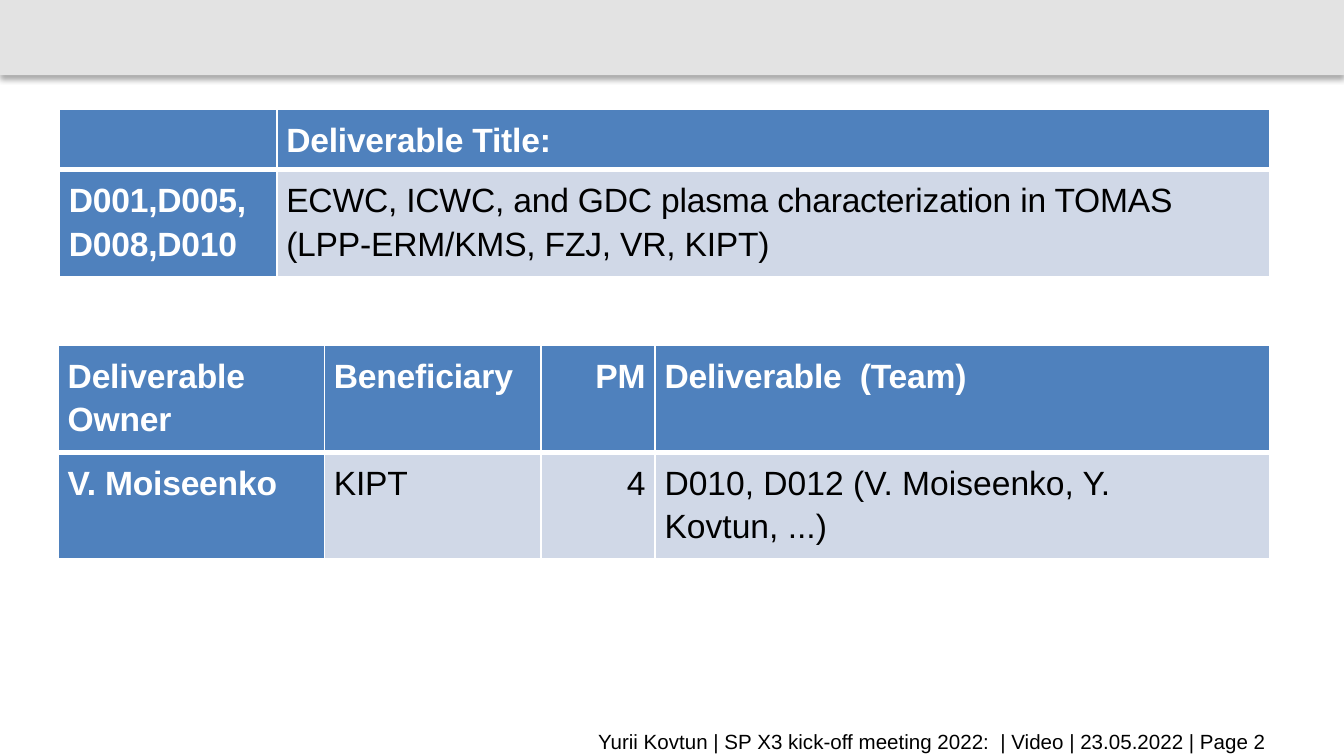
import pptx
import pptx.dml.color
import pptx.enum.shapes
import pptx.enum.text
import pptx.oxml
import pptx.oxml.ns
import pptx.util
from pptx.util import Cm

COLORS = {"band": "E3E3E3", "header": "4F81BD", "body": "D0D8E7",
          "white": "FFFFFF", "black": "000000"}
FONT = "Arial"
LEFT = pptx.enum.text.PP_ALIGN.LEFT
RIGHT = pptx.enum.text.PP_ALIGN.RIGHT


def rgb(name):
    return pptx.dml.color.RGBColor.from_string(COLORS[name])


def xml(markup):
    return pptx.oxml.parse_xml(markup.replace(">", f" {pptx.oxml.ns.nsdecls('a')}>", 1))


class SlideBuilder:
    def __init__(self, page):
        self.page = page

    def add_span(self, para, text, size, color, bold=False, spacing=0):
        span = para.add_run()
        span.text = text
        span.font.name = FONT
        span.font.size = pptx.util.Pt(size)
        span.font.bold = bold
        span.font.color.rgb = rgb(color)
        if spacing:
            span._r.get_or_add_rPr().set("spc", str(spacing))

    def add_band(self, width, height):
        band = self.page.shapes.add_shape(
            pptx.enum.shapes.MSO_SHAPE.RECTANGLE, 0, 0, width, height)
        band.fill.solid()
        band.fill.fore_color.rgb = rgb("band")
        band.line.fill.background()
        band.shadow.inherit = False
        effects = band._element.spPr.find(pptx.oxml.ns.qn("a:effectLst"))
        effects.append(xml(
            '<a:outerShdw blurRad="39370" dist="22860" dir="5400000" rotWithShape="0">'
            f'<a:srgbClr val="{COLORS["black"]}"><a:alpha val="35000"/></a:srgbClr>'
            '</a:outerShdw>'))

    def add_footer(self, text, left, top, width, height):
        box = self.page.shapes.add_textbox(left, top, width, height)
        box.text_frame.word_wrap = True
        para = box.text_frame.paragraphs[0]
        para.alignment = RIGHT
        self.add_span(para, text, 11, "black")

    def add_borders(self, cell, is_header):
        thin, thick = 12192, 38100
        widths = {"lnL": thin, "lnR": thin,
                  "lnT": thin if is_header else thick,
                  "lnB": thick if is_header else thin}
        properties = cell._tc.get_or_add_tcPr()
        for side, width in widths.items():
            properties.append(xml(
                f'<a:{side} w="{width}"><a:solidFill>'
                f'<a:srgbClr val="{COLORS["white"]}"/></a:solidFill></a:{side}>'))

    def add_table(self, rows, left, top, widths, heights,
                  right_columns=(), unspaced_cells=()):
        table = self.page.shapes.add_table(
            len(rows), len(widths), left, top, sum(widths), sum(heights)).table
        for column, width in zip(table.columns, widths):
            column.width = width
        for row, height in zip(table.rows, heights):
            row.height = height
        for i, texts in enumerate(rows):
            for j, text in enumerate(texts):
                cell = table.cell(i, j)
                # The top row and the first column share the header style
                strong = i == 0 or j == 0
                self.add_borders(cell, is_header=i == 0)
                cell.fill.solid()
                cell.fill.fore_color.rgb = rgb("header" if strong else "body")
                cell.margin_left = cell.margin_right = Cm(0.18)
                cell.margin_top = cell.margin_bottom = Cm(0.13)
                para = cell.text_frame.paragraphs[0]
                para.line_spacing = 1.15
                para.alignment = RIGHT if j in right_columns else LEFT
                if text:
                    self.add_span(para, text, 18, "white" if strong else "black",
                                  bold=strong,
                                  spacing=0 if (i, j) in unspaced_cells else -10)


def main():
    deck = pptx.Presentation()
    deck.slide_width, deck.slide_height = Cm(25.4), Cm(14.28)
    builder = SlideBuilder(deck.slides.add_slide(deck.slide_layouts[6]))

    # Header band and footer
    builder.add_band(deck.slide_width, Cm(1.42))
    builder.add_footer(
        "Yurii Kovtun | SP X3 kick-off meeting 2022:  | Video | 23.05.2022 | Page 2",
        Cm(1.3), Cm(13.64), Cm(22.89), Cm(0.56))

    # Deliverable titles
    builder.add_table(
        [["", "Deliverable Title:"],
         ["D001,D005, D008,D010",
          "ECWC, ICWC, and GDC plasma characterization in TOMAS "
          "(LPP-ERM/KMS, FZJ, VR, KIPT)"]],
        Cm(1.12), Cm(2.07), [Cm(4.11), Cm(18.77)], [Cm(0.94), Cm(1.63)])

    # Owners and teams
    builder.add_table(
        [["Deliverable Owner", "Beneficiary", "PM", "Deliverable  (Team)"],
         ["V. Moiseenko", "KIPT", "4", "D010, D012 (V. Moiseenko, Y. Kovtun, ...)"]],
        Cm(1.1), Cm(6.53), [Cm(5.03), Cm(4.09), Cm(2.16), Cm(11.61)],
        [Cm(1.63), Cm(0.58)], right_columns=(2,), unspaced_cells=((1, 3),))

    deck.save("out.pptx")


if __name__ == "__main__":
    main()
